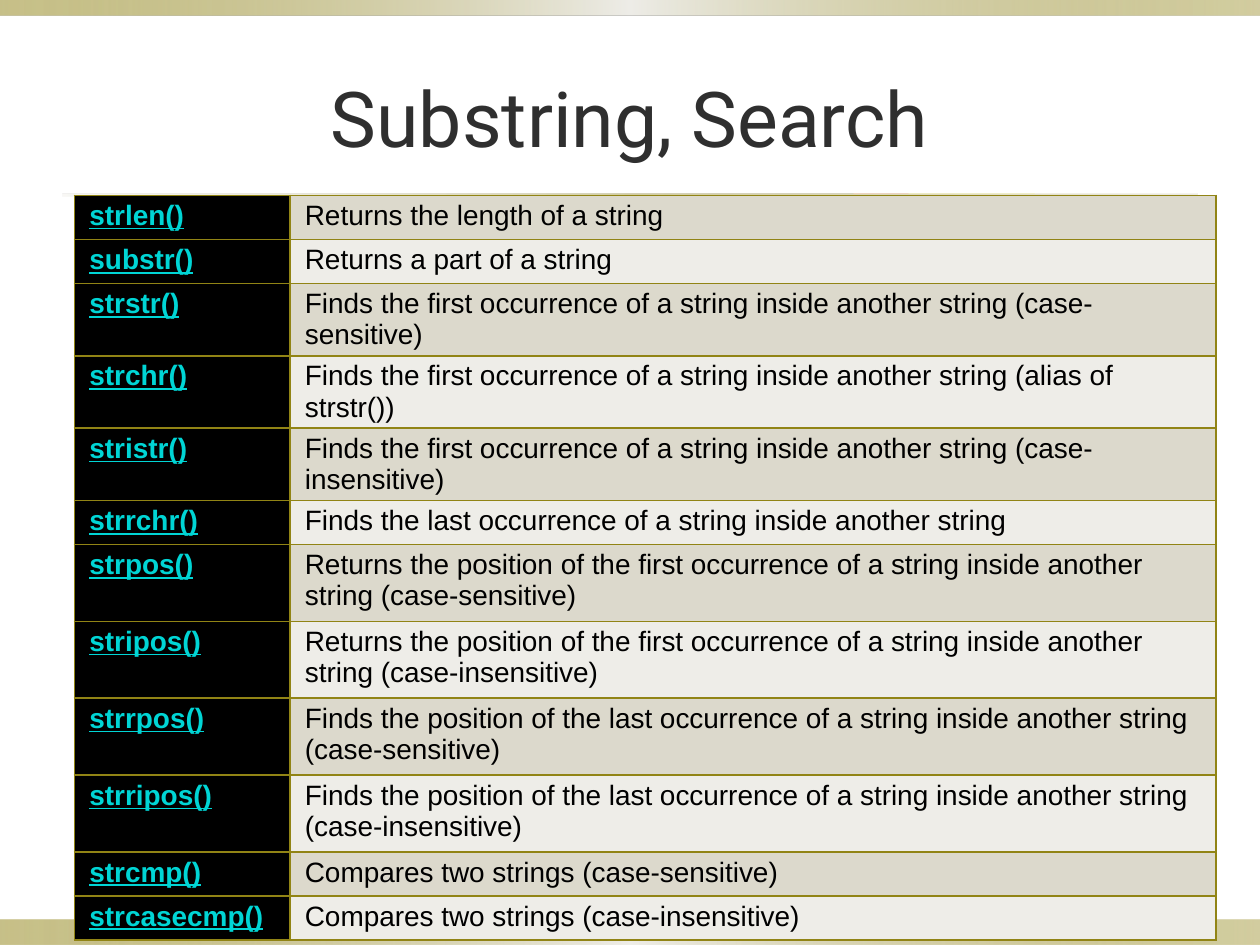
from lxml.etree import SubElement
from pptx import Presentation
from pptx.dml.color import RGBColor
from pptx.enum.shapes import MSO_SHAPE
from pptx.enum.text import MSO_ANCHOR, PP_ALIGN
from pptx.oxml.ns import qn
from pptx.util import Inches, Pt

OLIVE = RGBColor(0x91, 0x84, 0x15)
SAND = RGBColor(0xDC, 0xD9, 0xCC)
PALE = RGBColor(0xEE, 0xED, 0xE8)
CYAN = RGBColor(0x00, 0xD5, 0xD5)
BLACK = RGBColor(0, 0, 0)
GREY = RGBColor(0x2F, 0x2F, 0x2F)

# Each stop: position %, colour, opacity %
BAND = [(0, OLIVE, 50), (50, PALE, 100), (100, OLIVE, 40)]
RULE = [(0, SAND, 20), (50, OLIVE, 40), (100, SAND, 50)]

FIRST = "Finds the first occurrence of a string inside another string"
START = "Returns the position of the first occurrence of a string inside another string"
LAST = "Finds the position of the last occurrence of a string inside another string"
ROWS = [
    ("strlen()", "Returns the length of a string", 0.35),
    ("substr()", "Returns a part of a string", 0.35),
    ("strstr()", f"{FIRST} (case-sensitive)", 0.41),
    ("strchr()", f"{FIRST} (alias of strstr())", 0.41),
    ("stristr()", f"{FIRST} (case-insensitive)", 0.41),
    ("strrchr()", "Finds the last occurrence of a string inside another string", 0.35),
    ("strpos()", f"{START} (case-sensitive)", 0.61),
    ("stripos()", f"{START} (case-insensitive)", 0.61),
    ("strrpos()", f"{LAST} (case-sensitive)", 0.61),
    ("strripos()", f"{LAST} (case-insensitive)", 0.61),
    ("strcmp()", "Compares two strings (case-sensitive)", 0.35),
    ("strcasecmp()", "Compares two strings (case-insensitive)", 0.35),
]


def add_color(parent, color):
    return SubElement(parent, qn("a:srgbClr"), val=str(color))


def add_strip(slide, box, stops):
    """Draw a borderless bar with a left-to-right gradient."""
    bar = slide.shapes.add_shape(MSO_SHAPE.RECTANGLE, *map(Inches, box))
    bar.shadow.inherit = False
    bar.line.fill.background()
    bar.fill.gradient()
    bar.fill.gradient_angle = 0
    group = next(bar.element.spPr.iter(qn("a:gsLst")))
    for old in list(group):
        group.remove(old)
    for pos, color, alpha in stops:
        stop = SubElement(group, qn("a:gs"), pos=str(pos * 1000))
        SubElement(add_color(stop, color), qn("a:alpha"), val=str(alpha * 1000))


def add_run(para, text, font, size, color):
    run = para.add_run()
    run.text = text
    run.font.name = font
    run.font.size = Pt(size)
    run.font.color.rgb = color
    return run


def set_title(slide, box, text):
    title = slide.shapes.title
    title.left, title.top, title.width, title.height = map(Inches, box)
    frame = title.text_frame
    frame.vertical_anchor = MSO_ANCHOR.MIDDLE
    para = frame.paragraphs[0]
    para.alignment = PP_ALIGN.CENTER
    add_run(para, text, "Roboto", 44, GREY)


def add_borders(cell):
    props = cell._tc.get_or_add_tcPr()
    for side in ("lnL", "lnR", "lnT", "lnB"):
        line = SubElement(props, qn(f"a:{side}"), w=str(Pt(1)))
        add_color(SubElement(line, qn("a:solidFill")), OLIVE)


def fill_cell(cell, text, back, color, bold):
    add_borders(cell)
    cell.fill.solid()
    cell.fill.fore_color.rgb = back
    cell.margin_left = Inches(0.12)
    cell.margin_right = cell.margin_top = cell.margin_bottom = Inches(0.04)
    run = add_run(cell.text_frame.paragraphs[0], text, "Arial", 16, color)
    run.font.bold = run.font.underline = bold


def add_grid(slide, box, rows):
    """Place the function table, its name column 1.71 inches wide."""
    table = slide.shapes.add_table(len(rows), 2, *map(Inches, box)).table
    table.first_row = table.horz_banding = False
    table.columns[0].width = Inches(1.71)
    table.columns[1].width = Inches(box[2] - 1.71)
    for i, (name, use, height) in enumerate(rows):
        table.rows[i].height = Inches(height)
        fill_cell(table.cell(i, 0), name, BLACK, CYAN, True)
        fill_cell(table.cell(i, 1), use, PALE if i % 2 else SAND, BLACK, False)


def main():
    deck = Presentation()
    deck.slide_width, deck.slide_height = Inches(10), Inches(7.5)
    slide = deck.slides.add_slide(deck.slide_layouts[5])
    add_strip(slide, (0, 7.3, 10, 0.2), BAND)
    add_strip(slide, (0, 0, 10, 0.12), BAND)
    add_strip(slide, (0.5, 1.54, 9, 0.02), RULE)
    set_title(slide, (0.5, 0.3, 9, 1.25), "Substring, Search")
    add_grid(slide, (0.59, 1.55, 9.06, 5.39), ROWS)
    deck.save("out.pptx")


if __name__ == "__main__":
    main()
